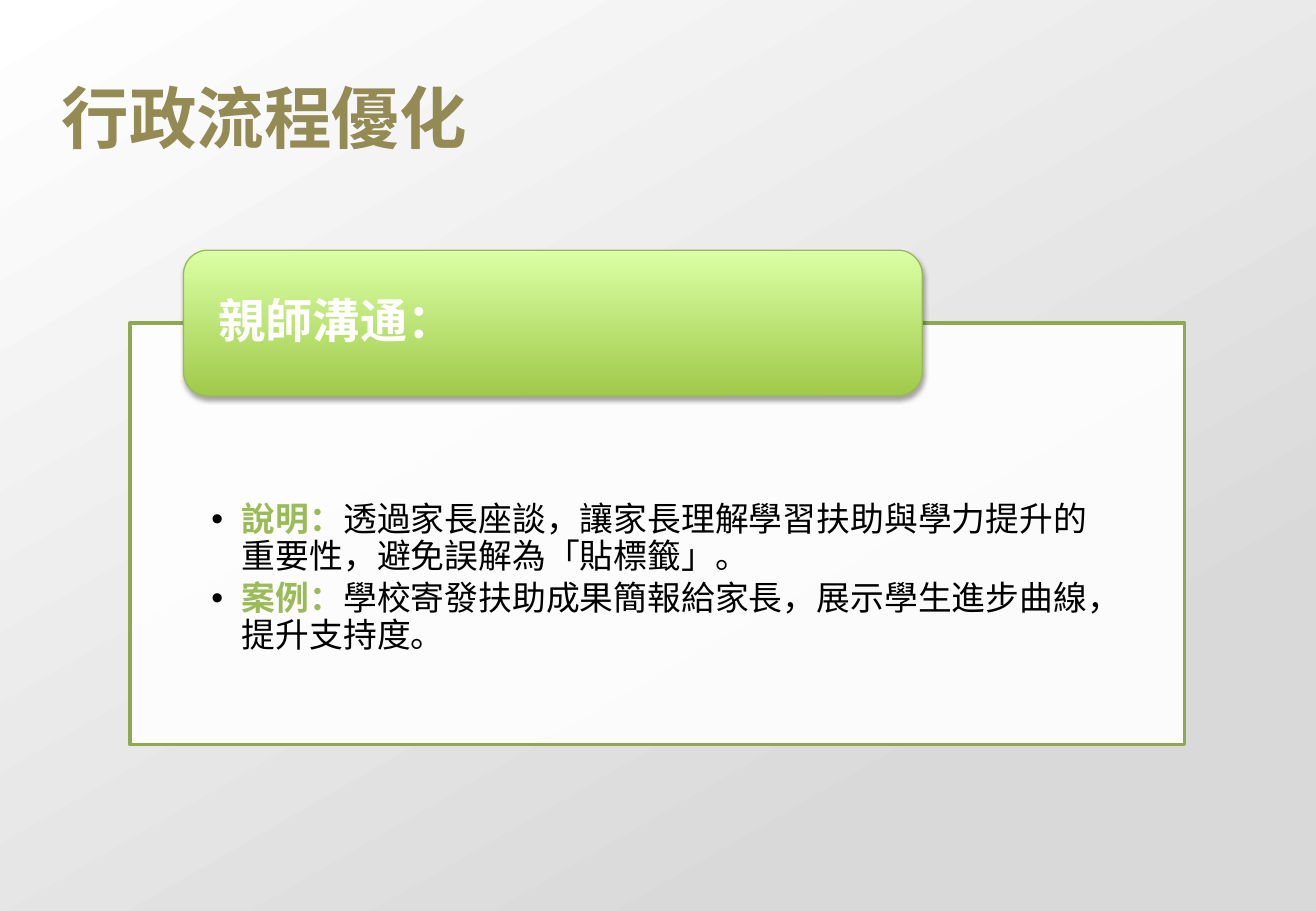
from dataclasses import dataclass

from lxml.etree import SubElement
from pptx import Presentation
from pptx.dml.color import RGBColor
from pptx.enum.shapes import MSO_SHAPE
from pptx.enum.text import MSO_ANCHOR, MSO_AUTO_SIZE, PP_ALIGN
from pptx.oxml.ns import qn
from pptx.util import Pt

PX = 9144  # 100 px to the inch


@dataclass(frozen=True)
class Theme:
    font: str = "Noto Sans CJK SC"
    title: str = "948A54"
    accent: str = "9BBB59"
    panel_line: str = "8DAA51"
    header_line: str = "98B955"
    header_from: str = "A0CA4A"
    header_to: str = "DAFFA5"
    back_from: str = "FFFFFF"
    back_to: str = "D9D9D9"
    white: str = "FFFFFF"
    black: str = "000000"
    title_size: int = 40
    header_size: int = 28
    body_size: int = 20


class Deck:
    def __init__(self, prs, theme):
        self.theme = theme
        self.s = prs.slides.add_slide(prs.slide_layouts[6])

    def gradient(self, fill, stops, angle):
        """Fill with two (position, colour) stops; angle runs clockwise."""
        fill.gradient()
        fill.gradient_angle = 360 - angle
        for stop, (position, color) in zip(fill.gradient_stops, stops):
            stop.position = position
            stop.color.rgb = RGBColor.from_string(color)

    def background(self):
        t = self.theme
        self.gradient(self.s.background.fill, [(0, t.back_from), (0.8, t.back_to)], 60)

    def run(self, p, text, size, color, bold=False):
        r = p.add_run()
        r.text = text
        r.font.size = Pt(size)
        r.font.bold = bold
        r.font.name = self.theme.font
        r.font.color.rgb = RGBColor.from_string(color)
        SubElement(r.font._element, qn("a:ea"), typeface=self.theme.font)

    def frame(self, sp, insets, anchor=MSO_ANCHOR.TOP):
        tf = sp.text_frame
        tf.word_wrap = True
        tf.vertical_anchor = anchor
        tf.margin_left, tf.margin_top, tf.margin_right, tf.margin_bottom = (
            n * PX for n in insets)
        return tf

    def box(self, kind, bounds, line, width):
        sp = self.s.shapes.add_shape(kind, *(n * PX for n in bounds))
        sp.shadow.inherit = False
        sp.line.color.rgb = RGBColor.from_string(line)
        sp.line.width = Pt(width)
        return sp

    def title(self, text, bounds):
        sp = self.s.shapes.add_textbox(*(n * PX for n in bounds))
        tf = self.frame(sp, (0, 0, 0, 0))
        tf.auto_size = MSO_AUTO_SIZE.SHAPE_TO_FIT_TEXT
        self.run(tf.paragraphs[0], text, self.theme.title_size, self.theme.title, True)

    def panel(self, items, bounds):
        """Translucent box with one bullet per (label, text) item."""
        t = self.theme
        sp = self.box(MSO_SHAPE.RECTANGLE, bounds, t.panel_line, 2)
        sp.fill.solid()
        sp.fill.fore_color.rgb = RGBColor.from_string(t.white)
        color = sp.fill._xPr.find(qn("a:solidFill"))[0]
        SubElement(color, qn("a:alpha"), val="90000")
        tf = self.frame(sp, (67, 148, 67, 16))
        for i, (label, text) in enumerate(items):
            p = tf.add_paragraph() if i else tf.paragraphs[0]
            p.alignment = PP_ALIGN.LEFT
            p.line_spacing = 0.9
            p.space_after = Pt(3.5)
            self.bullet(p)
            self.run(p, label, t.body_size, t.accent, True)
            self.run(p, text, t.body_size, t.black)

    def bullet(self, p):
        pPr = p._p.get_or_add_pPr()
        pPr.set("marL", str(25 * PX))
        pPr.set("indent", str(-25 * PX))
        color = SubElement(pPr, qn("a:buClr"))
        SubElement(color, qn("a:srgbClr"), val=self.theme.black)
        SubElement(pPr, qn("a:buFont"), typeface="Arial")
        SubElement(pPr, qn("a:buChar"), char="•")

    def header(self, text, bounds):
        t = self.theme
        sp = self.box(MSO_SHAPE.ROUNDED_RECTANGLE, bounds, t.header_line, 0.75)
        self.gradient(sp.fill, [(0, t.header_from), (1, t.header_to)], 270)
        self.drop_shadow(sp)
        p = self.frame(sp, (23, 0, 23, 0), MSO_ANCHOR.MIDDLE).paragraphs[0]
        p.alignment = PP_ALIGN.LEFT
        p.line_spacing = 0.9
        self.run(p, text, t.header_size, t.white, True)

    def drop_shadow(self, sp):
        effects = sp._element.spPr.find(qn("a:effectLst"))
        shadow = SubElement(effects, qn("a:outerShdw"), blurRad=str(Pt(3.1)),
                            dist=str(Pt(1.8)), dir="5400000", rotWithShape="0")
        color = SubElement(shadow, qn("a:srgbClr"), val=self.theme.black)
        SubElement(color, qn("a:alpha"), val="35000")


def main():
    prs = Presentation()
    prs.slide_width, prs.slide_height = 1083 * PX, 750 * PX
    deck = Deck(prs, Theme())
    deck.background()
    deck.title("行政流程優化", (51, 63, 1031, 67))
    deck.panel([
        ("說明：", "透過家長座談，讓家長理解學習扶助與學力提升的重要性，避免誤解為「貼標籤」。"),
        ("案例：", "學校寄發扶助成果簡報給家長，展示學生進步曲線，提升支持度。"),
    ], (107, 266, 868, 347))
    deck.header("親師溝通：", (151, 206, 608, 120))
    prs.save("out.pptx")


if __name__ == "__main__":
    main()
